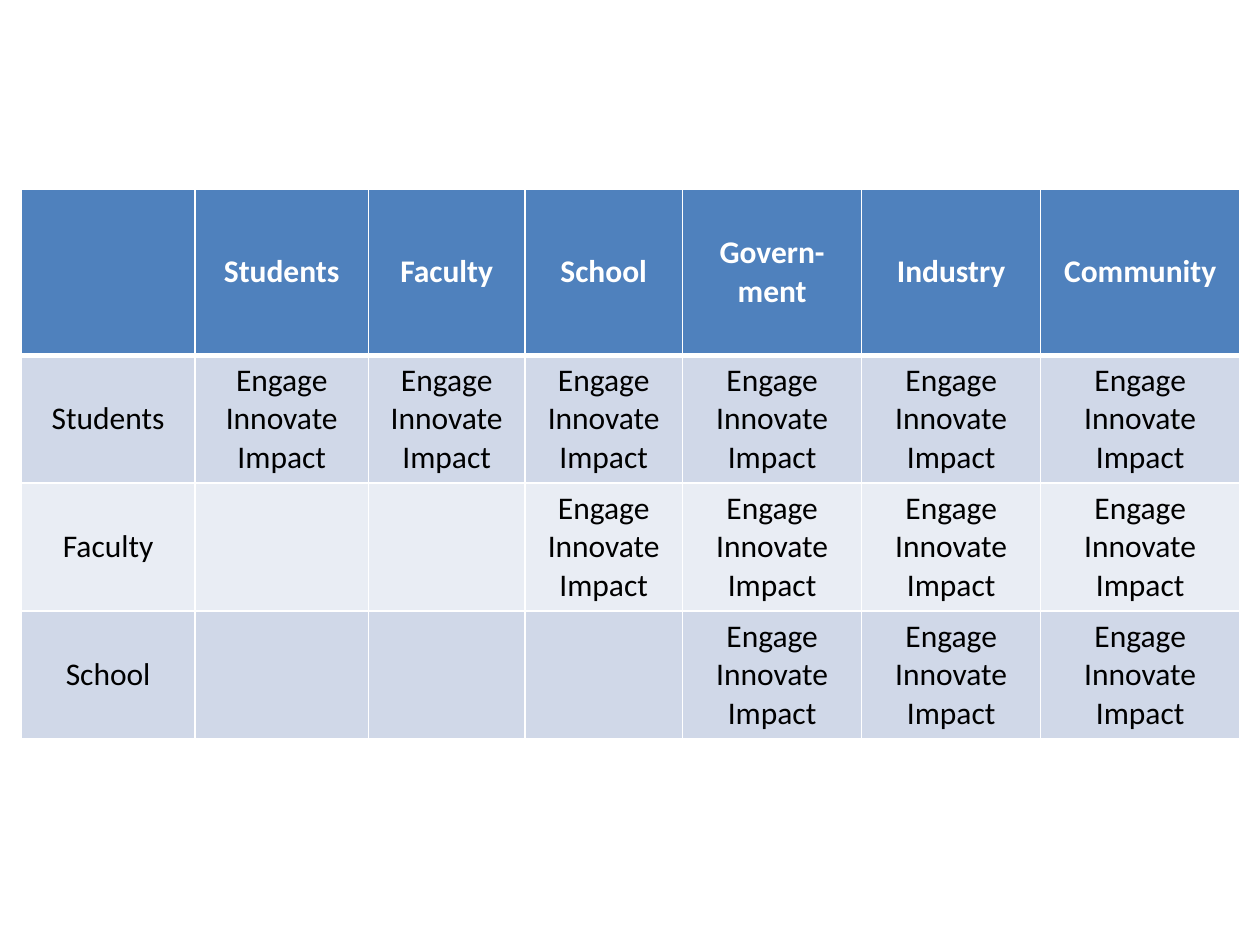
from pptx import Presentation
from pptx.dml.color import RGBColor
from pptx.enum.text import MSO_ANCHOR as Anchor, PP_ALIGN as Align
from pptx.oxml.ns import qn
from pptx.util import Cm, Pt
from lxml.etree import SubElement

AUDIENCES = ["Students", "Faculty", "School", "Govern-ment", "Industry", "Community"]
INITIATORS = AUDIENCES[:3]
FIRST_PARTNER = [0, 2, 3]
GOALS = "Engage\nInnovate\nImpact"
COLUMN_WIDTHS = [3.5, 3.5, 3.15, 3.18, 3.61, 3.61, 4.01]
ROW_HEIGHTS = [3.35, 2.54, 2.54, 2.54]


def rgb(value):
    return RGBColor.from_string(value)


class MatrixSlide:
    font = "Calibri"
    size = Pt(18)
    header_fill = "4F81BD"
    band_fills = ["D0D8E8", "E9EDF4"]
    white = "FFFFFF"
    black = "000000"

    def __init__(self, presentation):
        self.slide = presentation.slides.add_slide(presentation.slide_layouts[6])

    def border(self, cell, side, points):
        line = SubElement(cell._tc.get_or_add_tcPr(), qn(f"a:ln{side}"), w=str(Pt(points)))
        fill = SubElement(line, qn("a:solidFill"))
        SubElement(fill, qn("a:srgbClr"), val=self.white)

    def cell(self, cell, text, row):
        is_header = row == 0
        for side in "LRTB":
            meets_header = (row, side) in [(0, "B"), (1, "T")]
            self.border(cell, side, 3 if meets_header else 1)
        cell.fill.solid()
        cell.fill.fore_color.rgb = rgb(
            self.header_fill if is_header else self.band_fills[(row - 1) % 2])
        cell.vertical_anchor = Anchor.MIDDLE
        cell.text_frame.text = text
        for paragraph in cell.text_frame.paragraphs:
            paragraph.alignment = Align.CENTER
            for run in paragraph.runs:
                run.font.name = self.font
                run.font.size = self.size
                run.font.bold = is_header
                run.font.color.rgb = rgb(self.white if is_header else self.black)

    def table(self, left, top, widths, heights, content):
        matrix = self.slide.shapes.add_table(
            len(heights), len(widths), Cm(left), Cm(top),
            Cm(sum(widths)), Cm(sum(heights))).table
        for column, width in zip(matrix.columns, widths):
            column.width = Cm(width)
        for row, height in zip(matrix.rows, heights):
            row.height = Cm(height)
        for row, texts in enumerate(content):
            for column, text in enumerate(texts):
                self.cell(matrix.cell(row, column), text, row)


def main():
    presentation = Presentation()
    presentation.slide_width = Cm(25.4)
    presentation.slide_height = Cm(19.05)
    content = [["", *AUDIENCES]]
    for initiator, first in zip(INITIATORS, FIRST_PARTNER):
        goals = [GOALS if i >= first else "" for i in range(len(AUDIENCES))]
        content.append([initiator, *goals])
    MatrixSlide(presentation).table(0.43, 3.81, COLUMN_WIDTHS, ROW_HEIGHTS, content)
    presentation.save("out.pptx")


if __name__ == "__main__":
    main()
